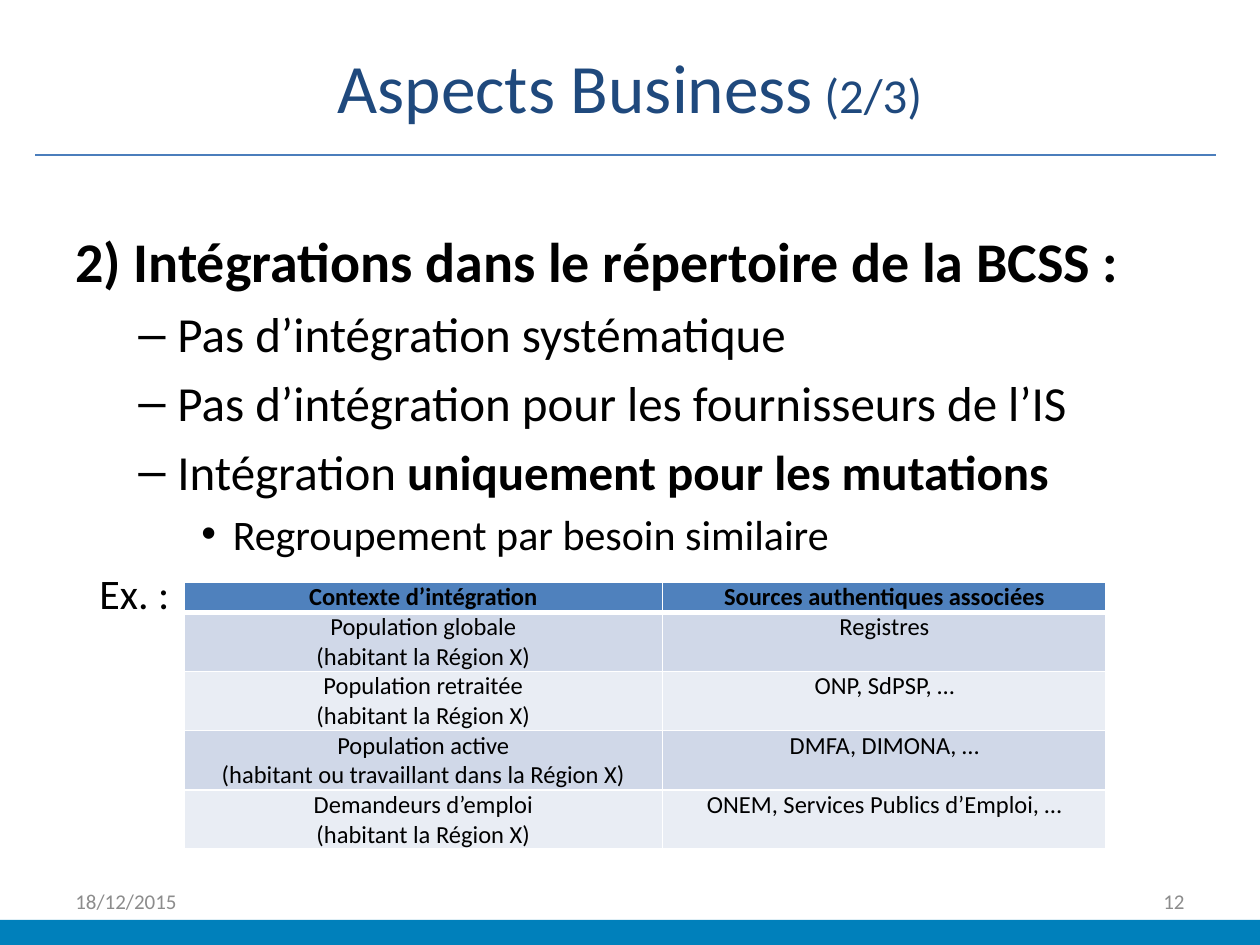
from pptx import Presentation
from pptx.dml.color import RGBColor
from pptx.enum.shapes import MSO_CONNECTOR, MSO_SHAPE
from pptx.enum.text import MSO_ANCHOR, PP_ALIGN
from pptx.oxml.ns import qn
from pptx.util import Inches, Pt
from lxml.etree import SubElement

FONT = "Calibri"
BLACK, WHITE, GREY = "000000", "FFFFFF", "8C8C8C"
HEADER, BANDS = "4F81BD", ("D0D8E8", "E9EDF4")

TITLE = [("Aspects Business", 39.6), (" (2/3)", 27.9)]
LEVELS = {
    "head": dict(size=32, left=0, hang=0, bullet=None),
    "dash": dict(size=28, left=0.81, hang=0.31, bullet="–"),
    "dot": dict(size=24, left=1.25, hang=0.25, bullet="•"),
    "example": dict(size=24, left=0.19, hang=0, bullet=None),
}
BODY = [
    ("head", [("2) Intégrations dans le répertoire de la BCSS :", True)]),
    ("dash", [("Pas d’intégration systématique", False)]),
    ("dash", [("Pas d’intégration pour les fournisseurs de l’IS", False)]),
    ("dash", [("Intégration ", False), ("uniquement pour les mutations", True)]),
    ("dot", [("Regroupement par besoin similaire", False)]),
    ("example", [("Ex. :", False)]),
]
ROWS = [
    ("Contexte d’intégration", "Sources authentiques associées"),
    ("Population globale\n(habitant la Région X)", "Registres"),
    ("Population retraitée\n(habitant la Région X)", "ONP, SdPSP, …"),
    ("Population active\n(habitant ou travaillant dans la Région X)", "DMFA, DIMONA, …"),
    ("Demandeurs d’emploi\n(habitant la Région X)", "ONEM, Services Publics d’Emploi, …"),
]


def rgb(value):
    """Turn a hex string into a colour."""
    return RGBColor.from_string(value)


def add_run(p, text, size, color=BLACK, bold=False):
    """Append a formatted run to a paragraph."""
    r = p.add_run()
    r.text = text
    for name, value in dict(name=FONT, size=Pt(size), bold=bold).items():
        setattr(r.font, name, value)
    r.font.color.rgb = rgb(color)


def add_box(s, box, anchor):
    """Add a wrapping text box and return its text frame."""
    tf = s.shapes.add_textbox(*map(Inches, box)).text_frame
    for name, value in dict(word_wrap=True, vertical_anchor=anchor).items():
        setattr(tf, name, value)
    return tf


def set_indent(p, left, hang, bullet):
    """Give a paragraph its indents and bullet."""
    pPr = p._p.get_or_add_pPr()
    pPr.set("marL", str(Inches(left)))
    pPr.set("indent", str(-Inches(hang)))
    if bullet:
        SubElement(pPr, qn("a:buFont")).set("typeface", "Arial")
        SubElement(pPr, qn("a:buChar")).set("char", bullet)
    else:
        SubElement(pPr, qn("a:buNone"))


def add_frame(s, rule, band):
    """Draw the line under the title and the band at the bottom."""
    x, y, width = map(Inches, rule)
    line = s.shapes.add_connector(MSO_CONNECTOR.STRAIGHT, x, y, x + width, y)
    line.line.color.rgb = rgb("4B7EBC")
    line.line.width = Pt(1.5)
    SubElement(line._element.spPr, qn("a:effectLst"))
    sp = s.shapes.add_shape(MSO_SHAPE.RECTANGLE, *map(Inches, band))
    sp.shadow.inherit = False
    sp.fill.solid()
    sp.fill.fore_color.rgb = rgb("0080BB")
    sp.line.fill.background()


def add_title(s, box):
    """Write the centred title."""
    p = add_box(s, box, MSO_ANCHOR.TOP).paragraphs[0]
    p.alignment = PP_ALIGN.CENTER
    for text, size in TITLE:
        add_run(p, text, size, "1F497D")


def add_body(s, box):
    """Write the outline, spacing each paragraph by a fifth of its size."""
    tf = add_box(s, box, MSO_ANCHOR.TOP)
    for i, (level, runs) in enumerate(BODY):
        p = tf.add_paragraph() if i else tf.paragraphs[0]
        style = LEVELS[level]
        set_indent(p, style["left"], style["hang"], style["bullet"])
        if i:
            p.space_before = Pt(style["size"] * 0.2)
        for text, bold in runs:
            add_run(p, text, style["size"], bold=bold)


def add_footer(s, box):
    """Write the date at the left and the page number at the right."""
    x, y, width, height = box
    part = 2.33
    for left, text, align in ((x, "18/12/2015", PP_ALIGN.LEFT),
                              (x + width - part, "12", PP_ALIGN.RIGHT)):
        p = add_box(s, (left, y, part, height), MSO_ANCHOR.MIDDLE).paragraphs[0]
        p.alignment = align
        add_run(p, text, 12, GREY)


def set_borders(cell, bottom):
    """Draw white cell borders with the given bottom width."""
    tcPr = cell._tc.get_or_add_tcPr()
    for i, (side, width) in enumerate(dict(lnL=1, lnR=1, lnT=1, lnB=bottom).items()):
        ln = tcPr.makeelement(qn(f"a:{side}"), {"w": str(Pt(width))})
        fill = SubElement(ln, qn("a:solidFill"))
        SubElement(fill, qn("a:srgbClr")).set("val", WHITE)
        tcPr.insert(i, ln)


def add_sources(s, box):
    """Build the table of contexts and sources."""
    table = s.shapes.add_table(len(ROWS), 2, *map(Inches, box)).table
    for column, width in zip(table.columns, (3.8, 3.52)):
        column.width = Inches(width)
    for i, row in enumerate(ROWS):
        header = i == 0
        table.rows[i].height = Inches(0.24 if header else 0.47)
        for j, text in enumerate(row):
            cell = table.cell(i, j)
            for side in ("left", "right", "top", "bottom"):
                setattr(cell, f"margin_{side}", 0)
            cell.fill.solid()
            cell.fill.fore_color.rgb = rgb(HEADER if header else BANDS[(i - 1) % 2])
            tf = cell.text_frame
            for k, line in enumerate(text.split("\n")):
                p = tf.add_paragraph() if k else tf.paragraphs[0]
                p.alignment = PP_ALIGN.CENTER
                add_run(p, line, 14, bold=header)
            set_borders(cell, 3 if header else 1)


def main():
    """Build the slide and save it."""
    prs = Presentation()
    prs.slide_width, prs.slide_height = Inches(10), Inches(7.5)
    s = prs.slides.add_slide(prs.slide_layouts[6])
    add_frame(s, (0.28, 1.23, 9.37), (0, 7.3, 10, 0.2))
    add_title(s, (0.5, 0.3, 9, 1.25))
    add_body(s, (0.5, 1.75, 9, 4.95))
    add_footer(s, (0.5, 6.95, 9, 0.4))
    add_sources(s, (1.46, 4.62, 7.32, 2.1))
    prs.save("out.pptx")


if __name__ == "__main__":
    main()
